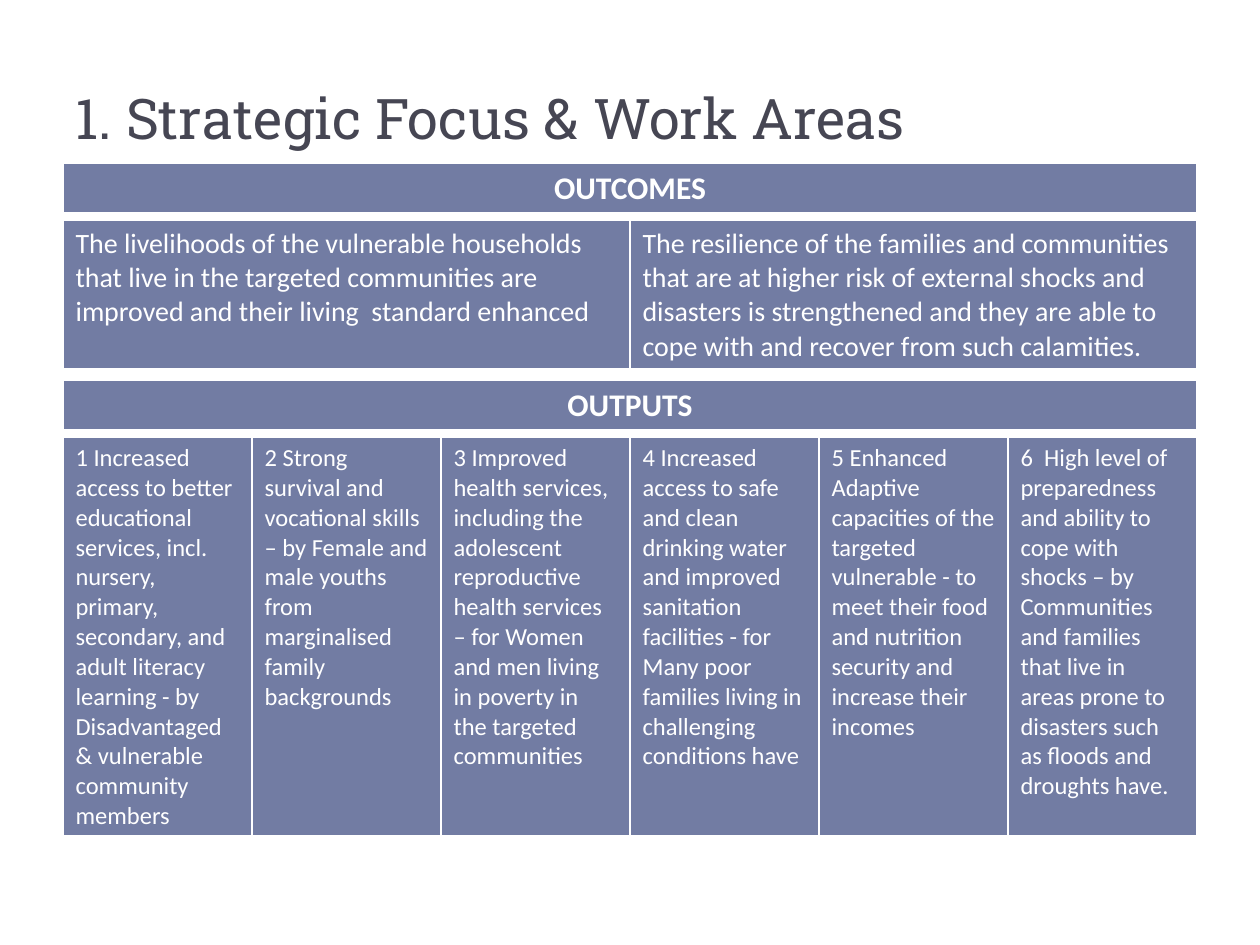
from lxml import etree
from pptx import Presentation
from pptx import util as u
from pptx.dml.color import RGBColor
from pptx.enum import text
from pptx.oxml import ns

Pt = u.Pt
COLORS = {"title": "464653", "cell": "727CA3", "white": "FFFFFF"}
BORDERS = {"lnL": 1, "lnR": 1, "lnT": 1, "lnB": 3}
LEFT, WIDTH = 36, 648


def format_run(run, font_name, size, color, bold=False):
    run.font.name = font_name
    run.font.size = Pt(size)
    run.font.bold = bold
    run.font.color.rgb = RGBColor.from_string(COLORS[color])


def add_borders(cell):
    properties = cell._tc.get_or_add_tcPr()
    for position, (tag, width) in enumerate(BORDERS.items()):
        line = etree.Element(ns.qn("a:" + tag), w=str(Pt(width)))
        fill = etree.SubElement(line, ns.qn("a:solidFill"))
        etree.SubElement(fill, ns.qn("a:srgbClr"), val=COLORS["white"])
        properties.insert(position, line)


presentation = Presentation()
presentation.slide_width, presentation.slide_height = Pt(720), Pt(540)
slide = presentation.slides.add_slide(presentation.slide_layouts[5])

# Title
title = slide.shapes.title
title.left, title.top, title.width, title.height = Pt(LEFT), Pt(12), Pt(WIDTH), Pt(78)
title.text_frame.text = "1. Strategic Focus & Work Areas"
title.text_frame.vertical_anchor = text.MSO_ANCHOR.BOTTOM
title.text_frame.auto_size = text.MSO_AUTO_SIZE.NONE
title_paragraph = title.text_frame.paragraphs[0]
title_paragraph.alignment = text.PP_ALIGN.LEFT
format_run(title_paragraph.runs[0], "Roboto Slab", 32, "title")

# Bands: top, height, font size, is heading, cell texts
outcomes = [
    "The livelihoods of the vulnerable households that live in the targeted communities "
    "are improved and their living  standard enhanced",
    "The resilience of the families and communities that are at higher risk of external "
    "shocks and disasters is strengthened and they are able to cope with and recover "
    "from such calamities.",
]
outputs = [
    "1 Increased access to better educational services, incl. nursery, primary, secondary, "
    "and adult literacy learning - by Disadvantaged & vulnerable community members",
    "2 Strong survival and vocational skills – by Female and male youths from "
    "marginalised family  backgrounds",
    "3 Improved health services, including the adolescent reproductive health services "
    "– for Women and men living in poverty in the targeted communities",
    "4 Increased access to safe and clean drinking water and improved sanitation "
    "facilities - for Many poor families living in challenging conditions have",
    "5 Enhanced Adaptive capacities of the targeted vulnerable - to meet their food and "
    "nutrition security and increase their incomes",
    "6  High level of preparedness and ability to cope with shocks – by Communities and "
    "families that live in areas prone to disasters such as floods and droughts have.",
]
bands = [
    (93.5, 29.2, 18, True, ["OUTCOMES"]),
    (126, 84, 16, False, outcomes),
    (217.5, 29.2, 18, True, ["OUTPUTS"]),
    (249.8, 209, 14, False, outputs),
]

# One table per band, with equal columns
for top, height, size, is_heading, cell_texts in bands:
    frame = slide.shapes.add_table(
        1, len(cell_texts), Pt(LEFT), Pt(top), Pt(WIDTH), Pt(height))
    table = frame.table
    table.first_row = is_heading
    table.horz_banding = False
    for column, cell_text in enumerate(cell_texts):
        cell = table.cell(0, column)
        cell.fill.solid()
        cell.fill.fore_color.rgb = RGBColor.from_string(COLORS["cell"])
        add_borders(cell)
        cell.text_frame.text = cell_text
        paragraph = cell.text_frame.paragraphs[0]
        paragraph.alignment = text.PP_ALIGN.CENTER if is_heading else text.PP_ALIGN.LEFT
        format_run(paragraph.runs[0], "Calibri", size, "white", is_heading)

presentation.save("out.pptx")
